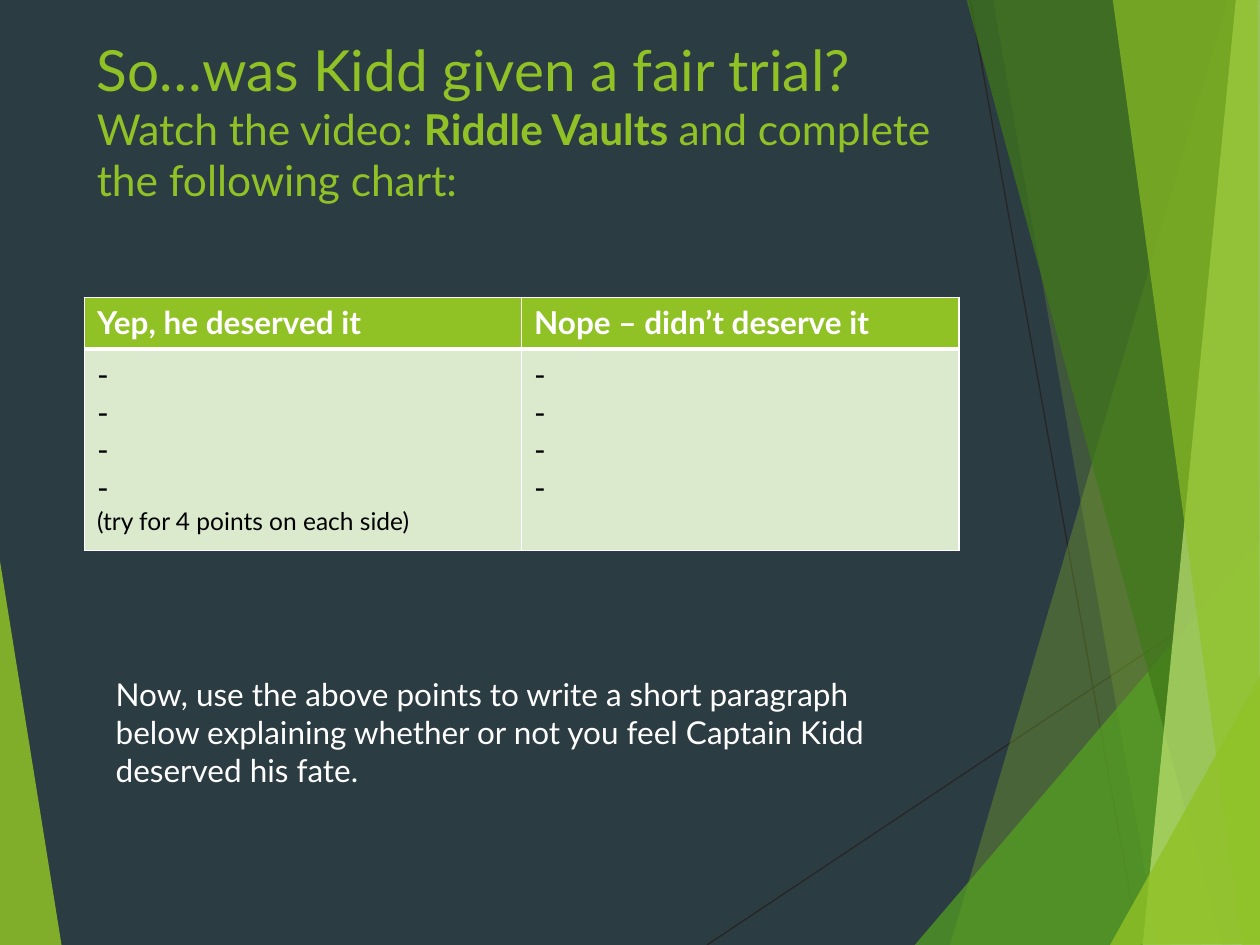
from lxml import etree
from pptx import Presentation
from pptx.dml.color import RGBColor
from pptx.enum.shapes import MSO_CONNECTOR
from pptx.enum.text import MSO_ANCHOR
from pptx.oxml.ns import qn
from pptx.util import Pt

STRAIGHT = MSO_CONNECTOR.STRAIGHT
TOP = MSO_ANCHOR.TOP
FONT = "Lato"
COLORS = {
    "background": "2C3C43", "line": "262626", "lime": "90C226",
    "green": "54A021", "forest": "3F7819", "pale": "C0E474",
    "cell": "DBE9CD", "white": "FFFFFF", "black": "000000",
}

# Content: paragraphs are lists of (text, format) runs
HEADING = {"size": 32.4, "color": "lime"}
SUBHEADING = {"size": 24.3, "color": "lime"}
TITLE = [[
    ("So…was Kidd given a fair trial? ", HEADING),
    ("Watch the video: ", SUBHEADING),
    ("Riddle Vaults ", {**SUBHEADING, "bold": True}),
    ("and complete the following chart:", SUBHEADING),
]]
TASK = [[("Now, use the above points to write a short paragraph below explaining "
          "whether or not you feel Captain Kidd deserved his fate.",
          {"size": 18, "color": "white"})]]
HEADER = {"size": 18, "color": "white", "bold": True}
POINT = {"size": 18, "color": "black", "bold": False}
POINTS = [[("-", POINT)]] * 4
HINT = [("(try for 4 points on each side)", {**POINT, "size": 14})]
VERDICTS = [
    [[[("Yep, he deserved it", HEADER)]], [[("Nope – didn’t deserve it", HEADER)]]],
    [POINTS + [HINT], POINTS],
]
ROW_FILLS = ["lime", "cell"]
ROW_HEIGHTS = [29.5, 115.2]
COLUMN_WIDTH = 249.84
# Border widths per row: left, right, top, bottom
ROW_BORDERS = [
    {"lnL": 1, "lnR": 1, "lnT": 1, "lnB": 3},
    {"lnL": 1, "lnR": 1, "lnT": 3, "lnB": 1},
]

# Background facets: colour, opacity in percent, corners
RAYS = [(404, 540, 720.7, 329), (554.4, 0, 650.9, 540)]
FACETS = [
    ("lime", 85, [(-0.7, 316.1), (35.3, 540.7), (-0.7, 540)]),
    ("lime", 30, [(702, 0), (542.9, 540), (721.4, 540.7), (720.7, 0.7)]),
    ("lime", 20, [(567.4, -0.7), (661.7, 540), (720.7, 540), (720.7, -0.7)]),
    ("green", 72, [(522.7, 540), (720, 308.9), (720.7, 540)]),
    ("forest", 70, [(552.2, -0.7), (698.4, 540), (720.7, 539.3), (720.7, -0.7)]),
    ("pale", 70, [(706.3, -0.7), (653, 540), (720.7, 540), (720, -0.7)]),
    ("lime", 65, [(635.8, -0.7), (709.9, 540), (720, 540), (718.6, -0.7)]),
    ("lime", 80, [(634.3, 540), (720.7, 385.2), (720.7, 539.3)]),
]


def rgb(name):
    return RGBColor.from_string(COLORS[name])


def paint(fill, color):
    fill.solid()
    fill.fore_color.rgb = rgb(color)


def write(frame, paragraphs):
    for index, runs in enumerate(paragraphs):
        paragraph = frame.add_paragraph() if index else frame.paragraphs[0]
        for text, style in runs:
            run = paragraph.add_run()
            run.text = text
            run.font.color.rgb = rgb(style["color"])
            formats = {"name": FONT, "size": Pt(style["size"]),
                       "bold": style.get("bold", False)}
            for attribute, value in formats.items():
                setattr(run.font, attribute, value)


def add_text(slide, box, paragraphs):
    frame = slide.shapes.add_textbox(*map(Pt, box)).text_frame
    frame.word_wrap = True
    frame.vertical_anchor = TOP
    write(frame, paragraphs)


def add_ray(slide, ends):
    ray = slide.shapes.add_connector(STRAIGHT, *map(Pt, ends))
    ray.line.color.rgb = rgb("line")
    ray.line.width = Pt(0.75)
    etree.SubElement(ray._element.spPr, qn("a:effectLst"))


def add_facet(slide, color, opacity, corners):
    start, *others = [(Pt(x), Pt(y)) for x, y in corners]
    builder = slide.shapes.build_freeform(*start)
    builder.add_line_segments(others, close=True)
    facet = builder.convert_to_shape()
    facet.shadow.inherit = False
    facet.line.fill.background()
    paint(facet.fill, color)
    tint = facet._element.spPr.find(qn("a:solidFill"))[0]
    etree.SubElement(tint, qn("a:alpha"), val=str(opacity * 1000))


def set_borders(cell, borders):
    properties = cell._tc.get_or_add_tcPr()
    for index, (side, width) in enumerate(borders.items()):
        border = etree.Element(qn(f"a:{side}"), w=str(Pt(width)))
        fill = etree.SubElement(border, qn("a:solidFill"))
        etree.SubElement(fill, qn("a:srgbClr"), val=COLORS["white"])
        properties.insert(index, border)


def add_verdicts(slide):
    box = (48.24, 169.92, 2 * COLUMN_WIDTH, sum(ROW_HEIGHTS))
    table = slide.shapes.add_table(2, 2, *map(Pt, box)).table
    for column in table.columns:
        column.width = Pt(COLUMN_WIDTH)
    for r, row in enumerate(VERDICTS):
        table.rows[r].height = Pt(ROW_HEIGHTS[r])
        for c, paragraphs in enumerate(row):
            cell = table.cell(r, c)
            paint(cell.fill, ROW_FILLS[r])
            set_borders(cell, ROW_BORDERS[r])
            write(cell.text_frame, paragraphs)


def main():
    deck = Presentation()
    deck.slide_width, deck.slide_height = Pt(720), Pt(540)
    slide = deck.slides.add_slide(deck.slide_layouts[6])
    paint(slide.background.fill, "background")

    # Background decoration
    for ends in RAYS:
        add_ray(slide, ends)
    for facet in FACETS:
        add_facet(slide, *facet)

    # Question, chart and writing task
    add_text(slide, (48.24, 16.56, 499.68, 103.68), TITLE)
    add_verdicts(slide)
    add_text(slide, (59.04, 382.32, 475.2, 72.72), TASK)
    deck.save("out.pptx")


if __name__ == "__main__":
    main()
